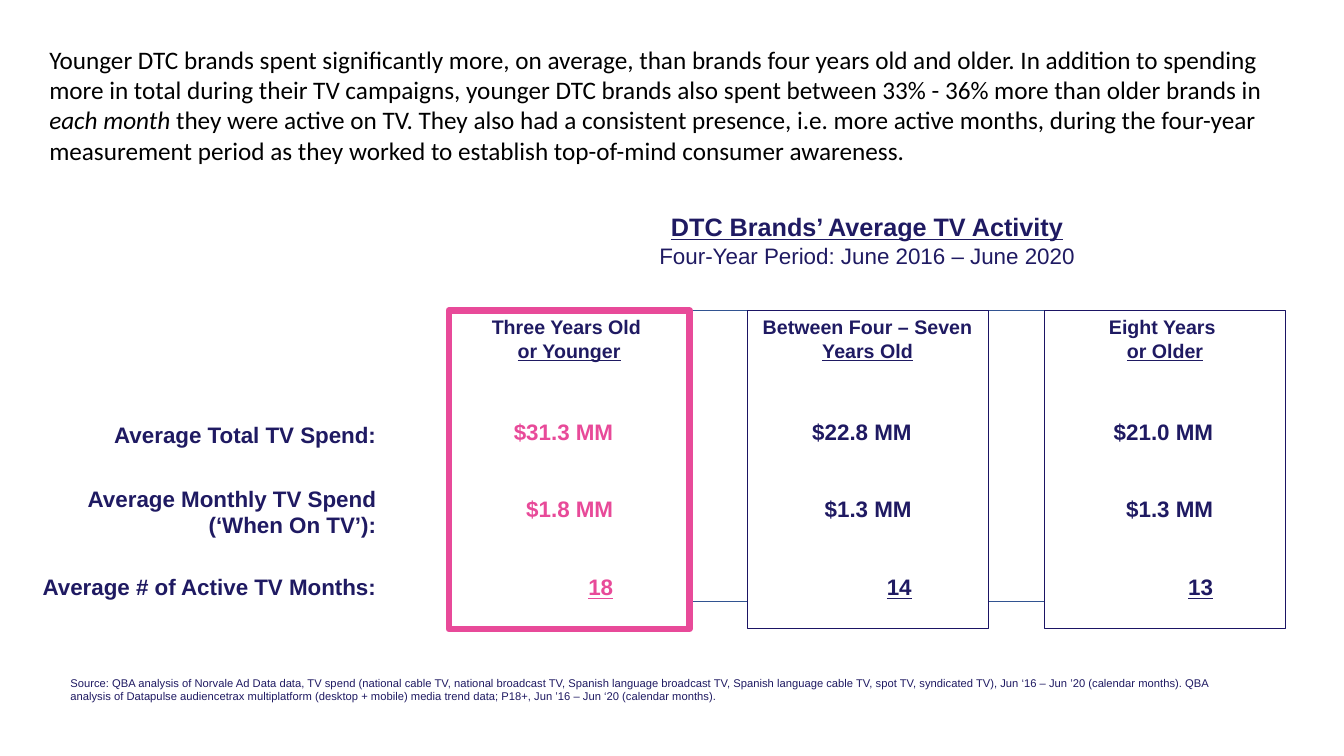
from pptx import Presentation
from pptx.dml.color import RGBColor
from pptx.enum.shapes import MSO_SHAPE
from pptx.enum.text import MSO_ANCHOR, MSO_AUTO_SIZE, PP_ALIGN
from pptx.util import Inches, Pt

RECT = MSO_SHAPE.RECTANGLE
TOP = MSO_ANCHOR.TOP
FIXED = MSO_AUTO_SIZE.NONE
LEFT, CENTER, RIGHT = PP_ALIGN.LEFT, PP_ALIGN.CENTER, PP_ALIGN.RIGHT

COLORS = {
    "ink": "1F1A62",
    "edge": "1B1464",
    "pink": "E84A99",
    "blue": "325491",
    "black": "000000",
    "white": "FFFFFF",
}


def color(name):
    return RGBColor.from_string(COLORS[name])


class Deck:
    font = "Arial"

    def __init__(self):
        self.show = Presentation()
        self.show.slide_width = Inches(13.33)
        self.show.slide_height = Inches(7.5)
        self.slide = self.show.slides.add_slide(self.show.slide_layouts[5])

    def label(self, shape, lines, size, align=LEFT, ink="ink", bold=True, font=font):
        frame = shape.text_frame
        frame.word_wrap = True
        frame.auto_size = FIXED
        frame.vertical_anchor = TOP
        for index, parts in enumerate(lines):
            line = frame.add_paragraph() if index else frame.paragraphs[0]
            line.alignment = align
            for text, style in parts:
                run = line.add_run()
                run.text = text
                run.font.name = font
                run.font.size = Pt(style.get("size", size))
                run.font.bold = style.get("bold", bold)
                run.font.italic = style.get("italic", False)
                run.font.underline = style.get("under", False)
                run.font.color.rgb = color(ink)

    def text(self, box, lines, size, **style):
        shape = self.slide.shapes.add_textbox(*map(Inches, box))
        self.label(shape, lines, size, **style)

    def title(self, box, lines, size):
        shape = self.slide.shapes.title
        shape.left, shape.top, shape.width, shape.height = map(Inches, box)
        self.label(shape, lines, size, align=CENTER)

    def panel(self, box, line, width, lines=()):
        shape = self.slide.shapes.add_shape(RECT, *map(Inches, box))
        shape.shadow.inherit = False
        shape.fill.solid()
        shape.fill.fore_color.rgb = color("white")
        shape.line.color.rgb = color(line)
        shape.line.width = Pt(width)
        self.label(shape, lines, 14, align=CENTER)


def main():
    plain, under = {}, {"under": True}
    deck = Deck()
    deck.title(
        (4.45, 2.05, 8.3, 0.67),
        [
            [("DTC Brands’ Average TV Activity", under)],
            [("Four-Year Period: June 2016 – June 2020", {"size": 16, "bold": False})],
        ],
        18,
    )
    intro = [
        ("Younger DTC brands spent significantly more, on average, than brands four "
         "years old and older. In addition to spending more in total during their TV "
         "campaigns, younger DTC brands also spent between 33% - 36% more than older "
         "brands in ", plain),
        ("each month ", {"italic": True}),
        ("they were active on TV. They also had a consistent presence, i.e. more "
         "active months, during the four-year measurement period as they worked to "
         "establish top-of-mind consumer awareness.", plain),
    ]
    deck.text((0.39, 0.39, 12.62, 1.31), [intro], 18,
              ink="black", bold=False, font="Calibri")

    source = (
        "Source: QBA analysis of Norvale Ad Data data, TV spend (national cable TV, "
        "national broadcast TV, Spanish language broadcast TV, Spanish language cable "
        "TV, spot TV, syndicated TV), Jun ‘16 – Jun ’20 (calendar months). QBA "
        "analysis of Datapulse audiencetrax multiplatform (desktop + mobile) media "
        "trend data; P18+, Jun ’16 – Jun ‘20 (calendar months)."
    )
    deck.text((0.6, 6.66, 11.56, 0.38), [[(source, plain)]], 8, bold=False)

    deck.panel((4.45, 3.08, 7.78, 2.89), "blue", 1)

    labels = [
        ("Average Total TV Spend:", 4.13, 0.37),
        ("Average Monthly TV Spend (‘When On TV’):", 4.76, 0.64),
        ("Average # of Active TV Months:", 5.64, 0.37),
    ]
    for label, top, height in labels:
        deck.text((0.19, top, 3.64, height), [[(label, plain)]], 16, align=RIGHT)

    groups = [
        (4.45, 6.18, "pink", 4.5, "pink",
         [[("Three Years Old ", plain)], [("or Younger", under)]],
         ["$31.3 MM", "$1.8 MM", "18"]),
        (7.41, 9.14, "edge", 0.75, "ink",
         [[("Between Four – Seven ", plain), ("Years Old", under)]],
         ["$22.8 MM", "$1.3 MM", "14"]),
        (10.36, 12.13, "edge", 0.75, "ink",
         [[("Eight Years ", plain)], [("or Older", under)]],
         ["$21.0 MM", "$1.3 MM", "13"]),
    ]
    rows = [(4.1, plain), (4.86, plain), (5.64, under)]
    wide = 1.44
    for left, right, line, width, ink, head, values in groups:
        deck.panel((left, 3.08, 2.39, 3.16), line, width, head)
        for (top, style), value in zip(rows, values):
            deck.text((right - wide, top, wide, 0.37), [[(value, style)]], 16,
                      align=RIGHT, ink=ink)

    deck.show.save("out.pptx")


if __name__ == "__main__":
    main()
